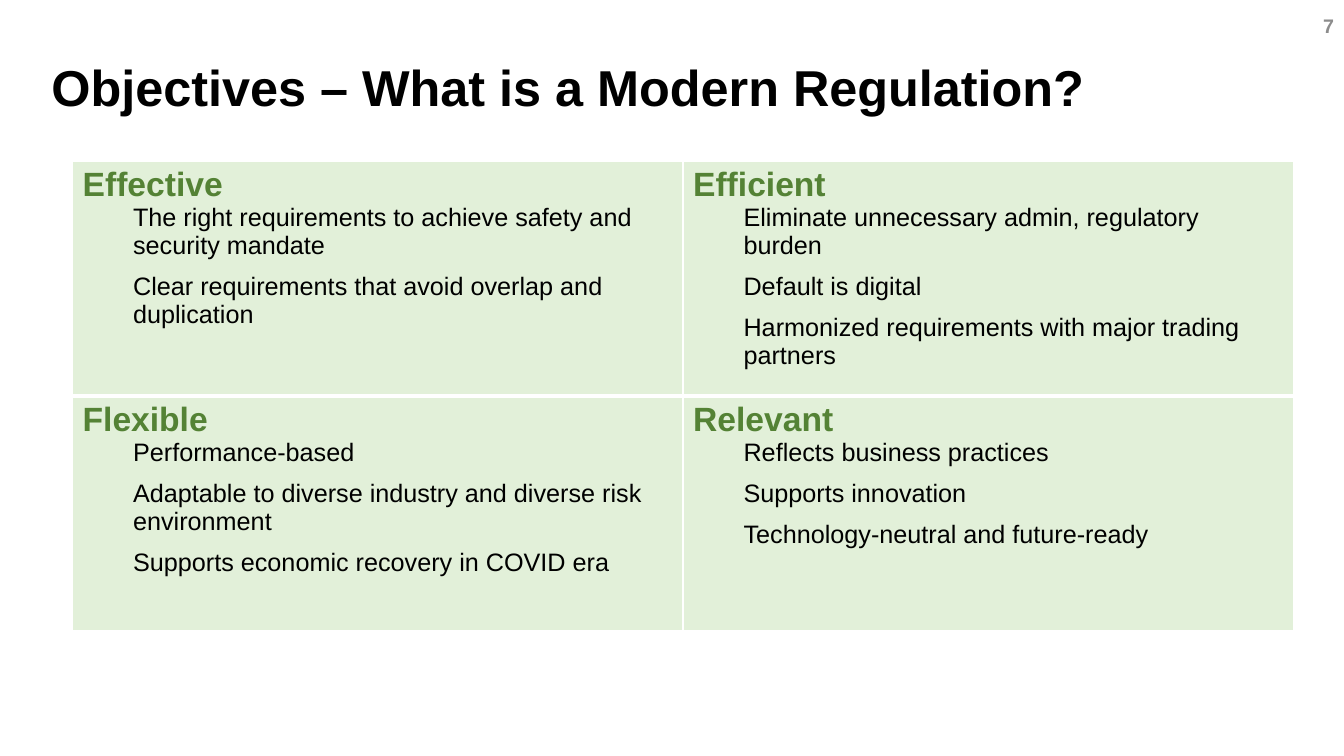
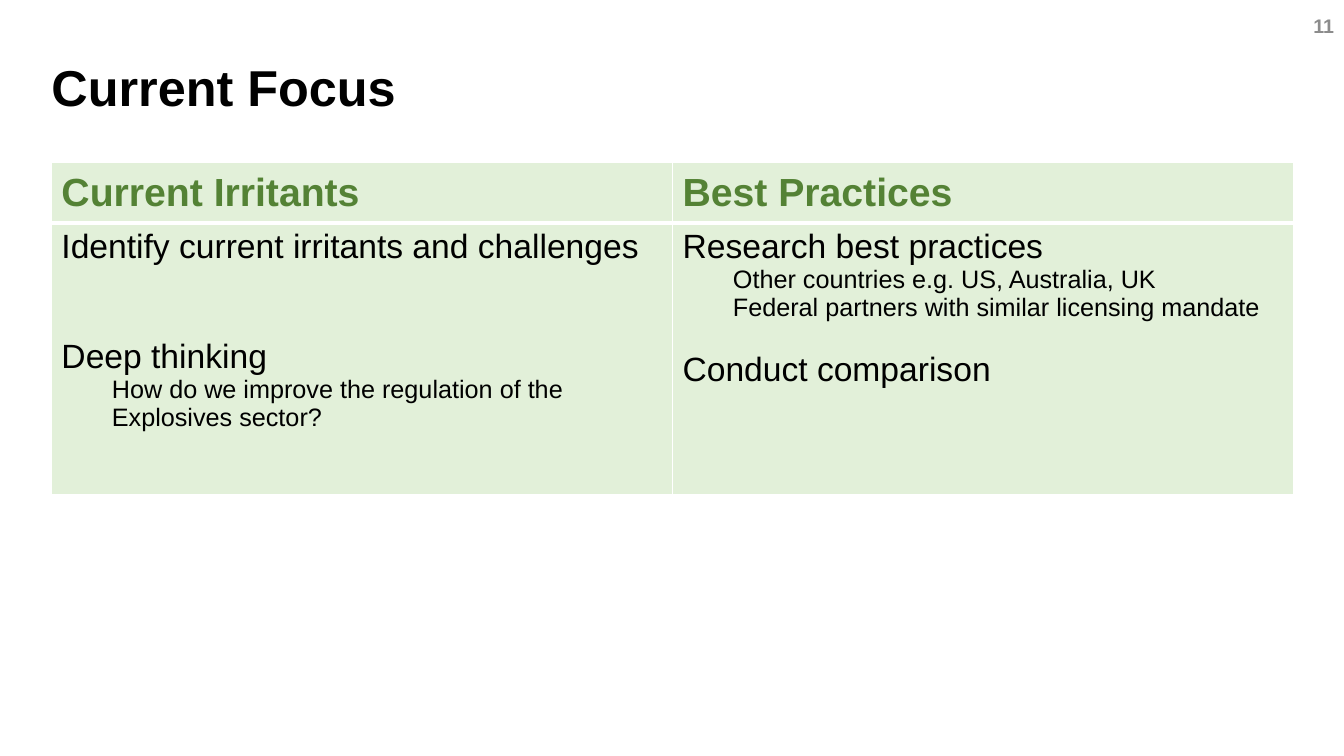
from dataclasses import dataclass

from lxml.etree import SubElement
from pptx import Presentation
from pptx.dml.color import RGBColor
from pptx.enum.text import MSO_ANCHOR, PP_ALIGN
from pptx.oxml.ns import qn
from pptx.util import Inches, Pt


@dataclass(frozen=True)
class Theme:
    font: str = "Arial"
    black: str = "000000"
    grey: str = "8C8C8C"
    green: str = "548235"
    pale_green: str = "E2F0D9"
    white: str = "FFFFFF"
    title_size: int = 36
    header_size: int = 28
    lead_size: int = 24
    detail_size: int = 18
    number_size: int = 14
    thin: int = 1
    thick: int = 3


class Deck:
    def __init__(self, theme):
        self.theme = theme
        # Paragraph styles: size, colour, bold, indent level
        self.styles = {
            "title": (theme.title_size, theme.black, True, 0),
            "number": (theme.number_size, theme.grey, True, 0),
            "header": (theme.header_size, theme.green, True, 0),
            "heading": (theme.lead_size, theme.green, True, 0),
            "lead": (theme.lead_size, theme.black, False, 0),
            "detail": (theme.detail_size, theme.black, False, 1),
        }
        self.prs = Presentation()
        self.prs.slide_width = Inches(13.33)
        self.prs.slide_height = Inches(7.5)
        self.s = None

    def slide(self, title, number):
        self.s = self.prs.slides.add_slide(self.prs.slide_layouts[6])
        # Title
        tf, p = self.text(title, "title", 0.51, 0.5, 12.32, 0.71, MSO_ANCHOR.BOTTOM)
        tf.margin_left = 0
        p.line_spacing = 0.9
        # Page number
        _, p = self.text(number, "number", 12.84, 0, 0.49, 0.5, MSO_ANCHOR.MIDDLE)
        p.alignment = PP_ALIGN.RIGHT

    def text(self, text, style, left, top, width, height, anchor):
        sp = self.s.shapes.add_textbox(
            Inches(left), Inches(top), Inches(width), Inches(height))
        tf = sp.text_frame
        tf.word_wrap = True
        tf.vertical_anchor = anchor
        p = tf.paragraphs[0]
        self.paragraph(p, text, style)
        return tf, p

    def paragraph(self, p, text, style, gap=0):
        size, color, bold, level = self.styles[style]
        p.text = text
        if level:
            p.level = level
            pPr = p._p.get_or_add_pPr()
            pPr.set("marL", str(Inches(0.5)))
            pPr.set("indent", "0")
        if gap:
            p.space_before = Pt(gap)
        font = p.font
        font.name = self.theme.font
        font.size = Pt(size)
        font.bold = bold
        font.color.rgb = RGBColor.from_string(color)

    def border(self, cell, side, width):
        tcPr = cell._tc.get_or_add_tcPr()
        ln = SubElement(tcPr, qn(f"a:ln{side}"), w=str(Pt(width)))
        fill = SubElement(ln, qn("a:solidFill"))
        SubElement(fill, qn("a:srgbClr"), val=self.theme.white)

    def cell(self, cell, paragraphs, is_top):
        t = self.theme
        # Thick rule between the two rows, thin rules elsewhere
        widths = {"L": t.thin, "R": t.thin,
                  "T": t.thin if is_top else t.thick,
                  "B": t.thick if is_top else t.thin}
        for side, width in widths.items():
            self.border(cell, side, width)
        cell.fill.solid()
        cell.fill.fore_color.rgb = RGBColor.from_string(t.pale_green)
        tf = cell.text_frame
        for i, item in enumerate(paragraphs):
            p = tf.add_paragraph() if i else tf.paragraphs[0]
            self.paragraph(p, *item)

    def table(self, left, top, width, heights, rows, middle_top=False):
        columns = len(rows[0])
        table = self.s.shapes.add_table(
            len(rows), columns, Inches(left), Inches(top),
            Inches(width), Inches(sum(heights))).table
        table.first_row = table.horz_banding = False
        for column in table.columns:
            column.width = Inches(width / columns)
        for r, row in enumerate(rows):
            table.rows[r].height = Inches(heights[r])
            for c, paragraphs in enumerate(row):
                cell = table.cell(r, c)
                self.cell(cell, paragraphs, r == 0)
                if middle_top and r == 0:
                    cell.vertical_anchor = MSO_ANCHOR.MIDDLE


def objective(heading, *details):
    """A heading followed by evenly spaced details."""
    return [(heading, "heading")] + [
        (text, "detail", 9 if i else 0) for i, text in enumerate(details)]


def main():
    deck = Deck(Theme())

    # Objectives
    deck.slide("Objectives – What is a Modern Regulation?", "7")
    deck.table(0.72, 1.6, 12.11, [2.33, 2.33], [
        [objective("Effective",
                   "The right requirements to achieve safety and security mandate",
                   "Clear requirements that avoid overlap and duplication"),
         objective("Efficient",
                   "Eliminate unnecessary admin, regulatory burden",
                   "Default is digital",
                   "Harmonized requirements with major trading partners")],
        [objective("Flexible",
                   "Performance-based",
                   "Adaptable to diverse industry and diverse risk environment",
                   "Supports economic recovery in COVID era"),
         objective("Relevant",
                   "Reflects business practices",
                   "Supports innovation",
                   "Technology-neutral and future-ready")],
    ])

    # Current focus
    deck.slide("Current Focus", "11")
    deck.table(0.51, 1.61, 12.32, [0.6, 2.7], [
        [[("Current Irritants", "header")], [("Best Practices", "header")]],
        [[("Identify current irritants and challenges", "lead"),
          ("Deep thinking", "lead", 52),
          ("How do we improve the regulation of the Explosives sector?", "detail")],
         [("Research best practices", "lead"),
          ("Other countries e.g. US, Australia, UK", "detail"),
          ("Federal partners with similar licensing mandate", "detail"),
          ("Conduct comparison", "lead", 21)]],
    ], middle_top=True)

    deck.prs.save("out.pptx")


if __name__ == "__main__":
    main()
